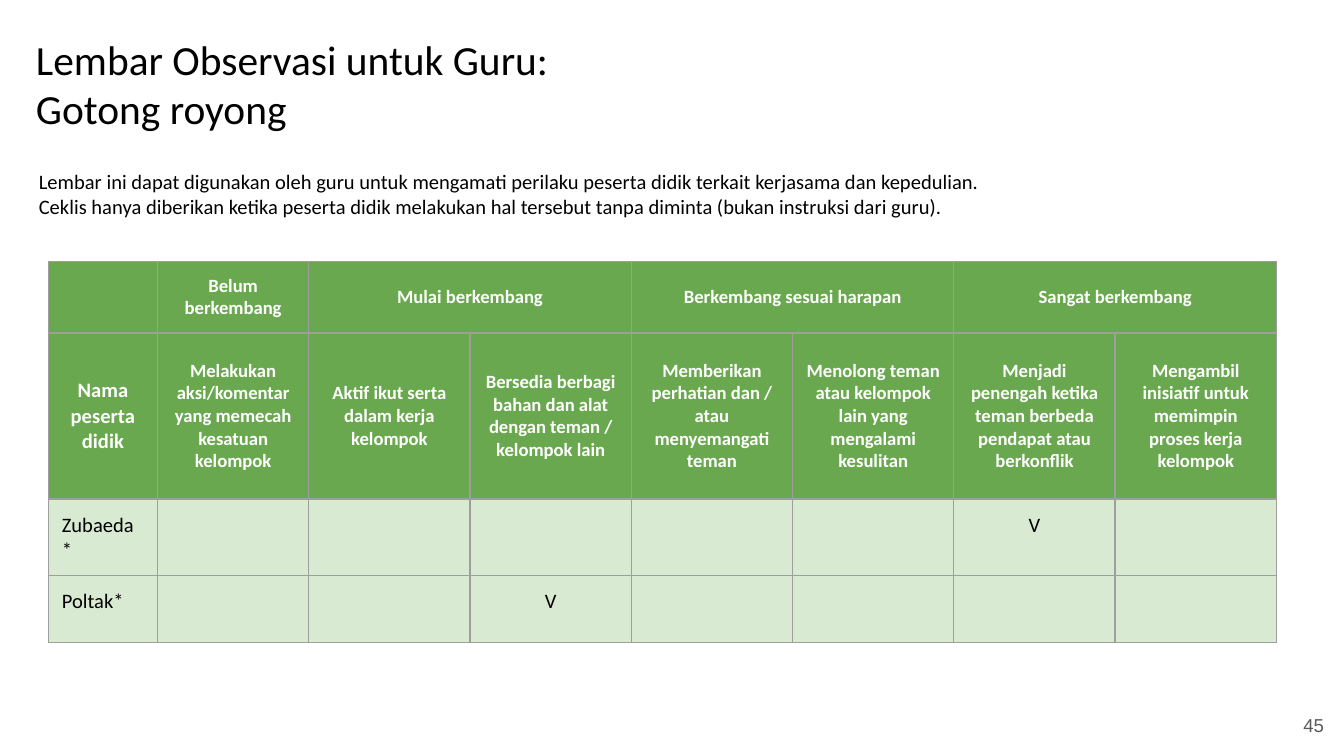
from dataclasses import dataclass

from lxml import etree
from pptx import Presentation
from pptx.dml.color import RGBColor
from pptx.enum.text import MSO_ANCHOR, PP_ALIGN
from pptx.oxml.ns import qn
from pptx.slide import Slide
from pptx.table import Table, _Cell
from pptx.text.text import TextFrame
from pptx.util import Pt

LEFT, CENTER, RIGHT = PP_ALIGN.LEFT, PP_ALIGN.CENTER, PP_ALIGN.RIGHT
TOP, MIDDLE = MSO_ANCHOR.TOP, MSO_ANCHOR.MIDDLE


@dataclass(frozen=True)
class Theme:
    font: str = "Calibri"
    number_font: str = "Arial"
    title_size: float = 22.2
    body_size: float = 11
    small_size: float = 10
    text: str = "000000"
    header_text: str = "FFFFFF"
    number: str = "595959"
    header_fill: str = "6AA84F"
    entry_fill: str = "D9EAD3"
    border: str = "9E9E9E"
    border_width: float = 0.75
    inset: float = 7.2


THEME = Theme()


@dataclass(frozen=True)
class Style:
    size: float
    color: str = THEME.text
    font: str = THEME.font
    bold: bool = False
    align: PP_ALIGN = LEFT
    anchor: MSO_ANCHOR = TOP


@dataclass(frozen=True)
class Label:
    text: str
    left: float
    top: float
    width: float
    height: float
    style: Style


@dataclass(frozen=True)
class Stage:
    name: str
    behaviours: tuple[str, ...]


@dataclass(frozen=True)
class Observation:
    student: str
    checked_column: int


HEADER = Style(THEME.small_size, THEME.header_text, bold=True, align=CENTER, anchor=MIDDLE)
NAME_HEADER = Style(THEME.body_size, THEME.header_text, bold=True, align=CENTER, anchor=MIDDLE)
STUDENT = Style(THEME.body_size)
CHECK = Style(THEME.body_size, align=CENTER)

LABELS = [
    Label("Lembar Observasi untuk Guru:\nGotong royong", 12.2, 10.8, 671, 68.4,
          Style(THEME.title_size)),
    Label("Lembar ini dapat digunakan oleh guru untuk mengamati perilaku peserta didik "
          "terkait kerjasama dan kepedulian.\n"
          "Ceklis hanya diberikan ketika peserta didik melakukan hal tersebut tanpa diminta "
          "(bukan instruksi dari guru).", 13.7, 83.5, 682.6, 41,
          Style(THEME.body_size)),
    Label("45", 673.2, 373, 43.2, 31,
          Style(THEME.small_size, THEME.number, THEME.number_font, align=RIGHT, anchor=MIDDLE)),
]

STAGES = [
    Stage("Belum berkembang", ("Melakukan aksi/komentar yang memecah kesatuan kelompok",)),
    Stage("Mulai berkembang", (
        "Aktif ikut serta dalam kerja kelompok",
        "Bersedia berbagi bahan dan alat dengan teman / kelompok lain")),
    Stage("Berkembang sesuai harapan", (
        "Memberikan perhatian dan / atau menyemangati teman",
        "Menolong teman atau kelompok lain yang mengalami kesulitan")),
    Stage("Sangat berkembang", (
        "Menjadi penengah ketika teman berbeda pendapat atau berkonflik",
        "Mengambil inisiatif untuk memimpin proses kerja kelompok")),
]
OBSERVATIONS = [Observation("Zubaeda*", 6), Observation("Poltak*", 3)]

TABLE_LEFT, TABLE_TOP = 25.9, 139.9
COLUMN_WIDTHS = [58.5, 81] + [86.4] * 6
ROW_HEIGHTS = [38.5, 89, 41, 36]
HEADER_ROWS = 2


def write(frame: TextFrame, text: str, style: Style) -> None:
    frame.text = text
    for paragraph in frame.paragraphs:
        paragraph.alignment = style.align
        for run in paragraph.runs:
            run.font.name = style.font
            run.font.size = Pt(style.size)
            run.font.bold = style.bold
            run.font.color.rgb = RGBColor.from_string(style.color)


def add_label(slide: Slide, label: Label) -> None:
    box = slide.shapes.add_textbox(
        Pt(label.left), Pt(label.top), Pt(label.width), Pt(label.height))
    frame = box.text_frame
    frame.word_wrap = True
    frame.vertical_anchor = label.style.anchor
    frame.margin_left = frame.margin_right = Pt(THEME.inset)
    frame.margin_top = frame.margin_bottom = Pt(THEME.inset)
    write(frame, label.text, label.style)


def format_cell(cell: _Cell, fill: str) -> None:
    cell.margin_left = cell.margin_right = Pt(THEME.inset)
    cell.margin_top = cell.margin_bottom = Pt(THEME.inset)
    properties = cell._tc.get_or_add_tcPr()
    for side in ("a:lnL", "a:lnR", "a:lnT", "a:lnB"):
        line = etree.SubElement(properties, qn(side), w=str(Pt(THEME.border_width)))
        solid = etree.SubElement(line, qn("a:solidFill"))
        etree.SubElement(solid, qn("a:srgbClr"), val=THEME.border)
    cell.fill.solid()
    cell.fill.fore_color.rgb = RGBColor.from_string(fill)


def fill_cell(table: Table, row: int, column: int, text: str, style: Style) -> None:
    cell = table.cell(row, column)
    cell.vertical_anchor = style.anchor
    write(cell.text_frame, text, style)


def add_observation_table(slide: Slide) -> None:
    table = slide.shapes.add_table(
        len(ROW_HEIGHTS), len(COLUMN_WIDTHS), Pt(TABLE_LEFT), Pt(TABLE_TOP),
        Pt(sum(COLUMN_WIDTHS)), Pt(sum(ROW_HEIGHTS))).table
    for column, width in zip(table.columns, COLUMN_WIDTHS):
        column.width = Pt(width)
    for index, (row, height) in enumerate(zip(table.rows, ROW_HEIGHTS)):
        row.height = Pt(height)
        for cell in row.cells:
            format_cell(cell, THEME.header_fill if index < HEADER_ROWS else THEME.entry_fill)

    fill_cell(table, 1, 0, "Nama peserta didik", NAME_HEADER)
    first = 1
    for stage in STAGES:
        last = first + len(stage.behaviours) - 1
        if last > first:
            table.cell(0, first).merge(table.cell(0, last))
        fill_cell(table, 0, first, stage.name, HEADER)
        for column, behaviour in enumerate(stage.behaviours, first):
            fill_cell(table, 1, column, behaviour, HEADER)
        first = last + 1

    for row, observation in enumerate(OBSERVATIONS, HEADER_ROWS):
        fill_cell(table, row, 0, observation.student, STUDENT)
        fill_cell(table, row, observation.checked_column, "V", CHECK)


def main() -> None:
    presentation = Presentation()
    presentation.slide_width, presentation.slide_height = Pt(720), Pt(405)
    slide = presentation.slides.add_slide(presentation.slide_layouts[6])
    for label in LABELS:
        add_label(slide, label)
    add_observation_table(slide)
    presentation.save("out.pptx")


if __name__ == "__main__":
    main()
